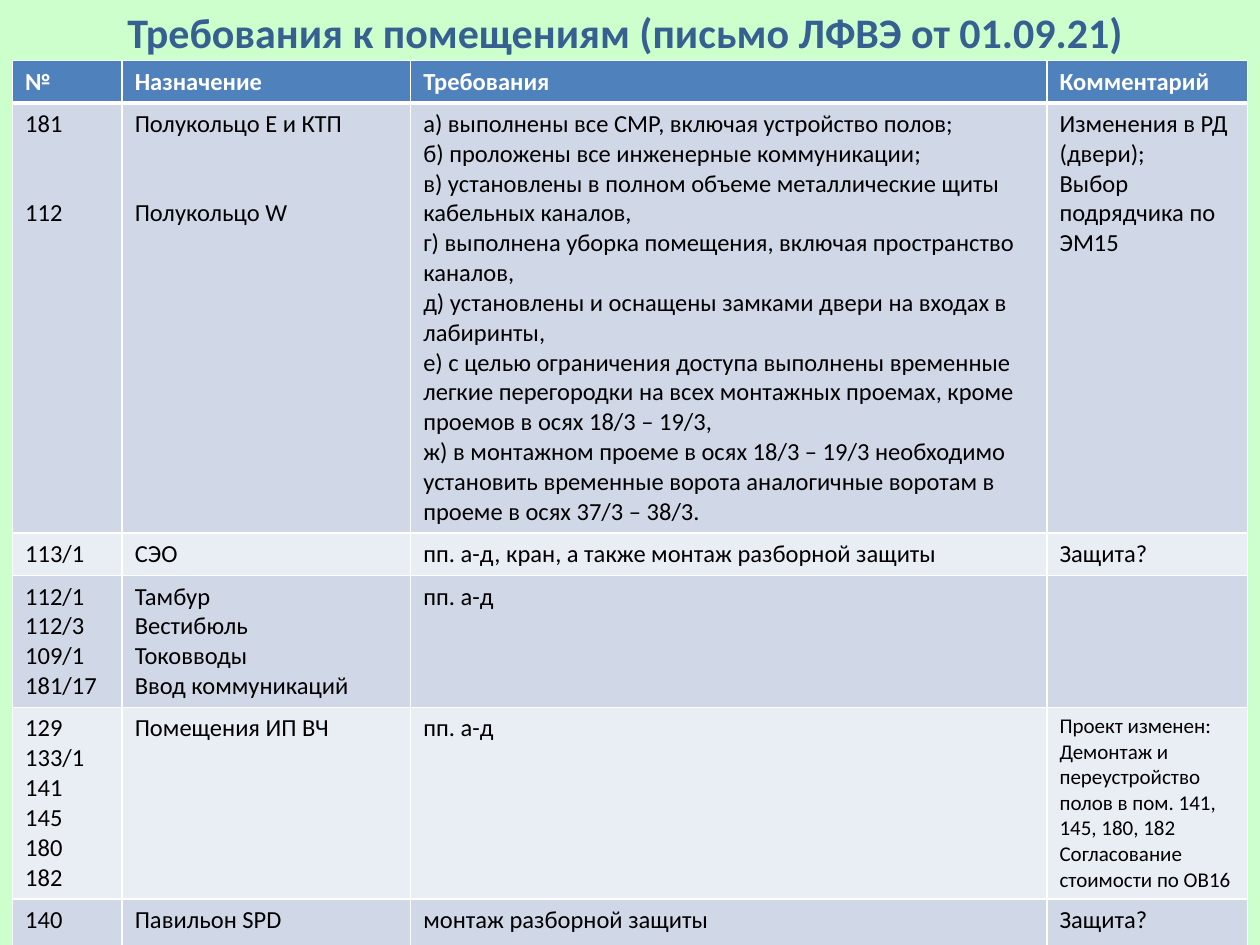
from lxml import etree
from pptx import Presentation
from pptx.dml.color import RGBColor
from pptx.enum.text import MSO_ANCHOR, PP_ALIGN
from pptx.oxml.ns import qn
from pptx.util import Inches, Pt

TOP, LEFT, CENTER = MSO_ANCHOR.TOP, PP_ALIGN.LEFT, PP_ALIGN.CENTER
FONT = "Calibri"
COLORS = {
    "page": "CCFFCC", "title": "376092", "header": "4F81BD",
    "odd": "D0D8E8", "even": "E9EDF4", "text": "000000", "white": "FFFFFF",
}
TITLE = "Требования к помещениям (письмо ЛФВЭ от 01.09.21) "
COLUMN_WIDTHS = [0.87, 2.29, 5.05, 1.59]
ROW_HEIGHTS = [0.33, 3.31, 0.33, 1.02, 1.48, 0.4]
GROUP_ROW, SMALL_CELL = 1, (4, 3)
GROUP_GAP = 34  # points: two lines of body text

# Each cell is a list of paragraphs
ROWS = [
    [["№"], ["Назначение"], ["Требования"], ["Комментарий"]],
    [
        ["181", "112"],
        ["Полукольцо E и КТП", "Полукольцо W"],
        [
            "а) выполнены все СМР, включая устройство полов;",
            "б) проложены все инженерные коммуникации;",
            "в) установлены в полном объеме металлические щиты кабельных каналов,",
            "г) выполнена уборка помещения, включая пространство каналов,",
            "д) установлены и оснащены замками двери на входах в лабиринты,",
            "е) с целью ограничения доступа выполнены временные легкие перегородки "
            "на всех монтажных проемах, кроме проемов в осях 18/3 – 19/3,",
            "ж) в монтажном проеме в осях 18/3 – 19/3 необходимо установить временные "
            "ворота аналогичные воротам в проеме в осях 37/3 – 38/3.",
        ],
        ["Изменения в РД (двери);", "Выбор подрядчика по ЭМ15"],
    ],
    [["113/1"], ["СЭО"], ["пп. а-д, кран, а также монтаж разборной защиты"], ["Защита?"]],
    [
        ["112/1", "112/3", "109/1", "181/17"],
        ["Тамбур", "Вестибюль", "Токовводы", "Ввод коммуникаций"],
        ["пп. а-д"],
        [],
    ],
    [
        ["129", "133/1", "141", "145", "180", "182"],
        ["Помещения ИП ВЧ"],
        ["пп. а-д"],
        [
            "Проект изменен:",
            "Демонтаж и переустройство полов в пом. 141, 145, 180, 182",
            "Согласование стоимости по ОВ16",
        ],
    ],
    [["140"], ["Павильон SPD"], ["монтаж разборной защиты"], ["Защита?"]],
]


def color(name):
    return RGBColor.from_string(COLORS[name])


def write(frame, lines, size=14, ink="text", bold=False, align=LEFT, gap=0):
    """Fill a text frame, one paragraph per line, with gap points between them."""
    for index, line in enumerate(lines):
        para = frame.add_paragraph() if index else frame.paragraphs[0]
        para.alignment = align
        if index and gap:
            para.space_before = Pt(gap)
        span = para.add_run()
        span.text = line
        span.font.name = FONT
        span.font.size = Pt(size)
        span.font.bold = bold
        span.font.color.rgb = color(ink)


def add_borders(cell, top=1, bottom=1):
    properties = cell._tc.get_or_add_tcPr()
    for side, width in (("L", 1), ("R", 1), ("T", top), ("B", bottom)):
        line = etree.SubElement(properties, qn(f"a:ln{side}"), w=str(Pt(width)))
        fill = etree.SubElement(line, qn("a:solidFill"))
        etree.SubElement(fill, qn("a:srgbClr"), val=COLORS["white"])


def add_title(page, width):
    title = page.shapes.title
    title.left, title.top, title.width, title.height = 0, 0, width, Inches(0.5)
    title.text_frame.vertical_anchor = TOP
    write(title.text_frame, [TITLE], size=24, ink="title", bold=True, align=CENTER)


def add_requirements(page):
    table = page.shapes.add_table(
        len(ROWS), len(COLUMN_WIDTHS), Inches(0.1), Inches(0.48),
        Inches(sum(COLUMN_WIDTHS)), Inches(sum(ROW_HEIGHTS))).table
    for column, width in zip(table.columns, COLUMN_WIDTHS):
        column.width = Inches(width)
    for row, height in zip(table.rows, ROW_HEIGHTS):
        row.height = Inches(height)

    for r, row in enumerate(ROWS):
        is_header = r == 0
        band = "header" if is_header else "odd" if r % 2 else "even"
        for c, lines in enumerate(row):
            cell = table.cell(r, c)
            # A thick rule separates the header from the body
            add_borders(cell, top=3 if r == 1 else 1, bottom=3 if is_header else 1)
            cell.fill.solid()
            cell.fill.fore_color.rgb = color(band)
            write(cell.text_frame, lines,
                  size=12 if (r, c) == SMALL_CELL else 14,
                  ink="white" if is_header else "text", bold=is_header,
                  gap=GROUP_GAP if r == GROUP_ROW and c < 2 else 0)


def main():
    deck = Presentation()
    deck.slide_width, deck.slide_height = Inches(10), Inches(7.5)
    page = deck.slides.add_slide(deck.slide_layouts.get_by_name("Title Only"))
    page.background.fill.solid()
    page.background.fill.fore_color.rgb = color("page")
    add_title(page, deck.slide_width)
    add_requirements(page)
    deck.save("out.pptx")


if __name__ == "__main__":
    main()
